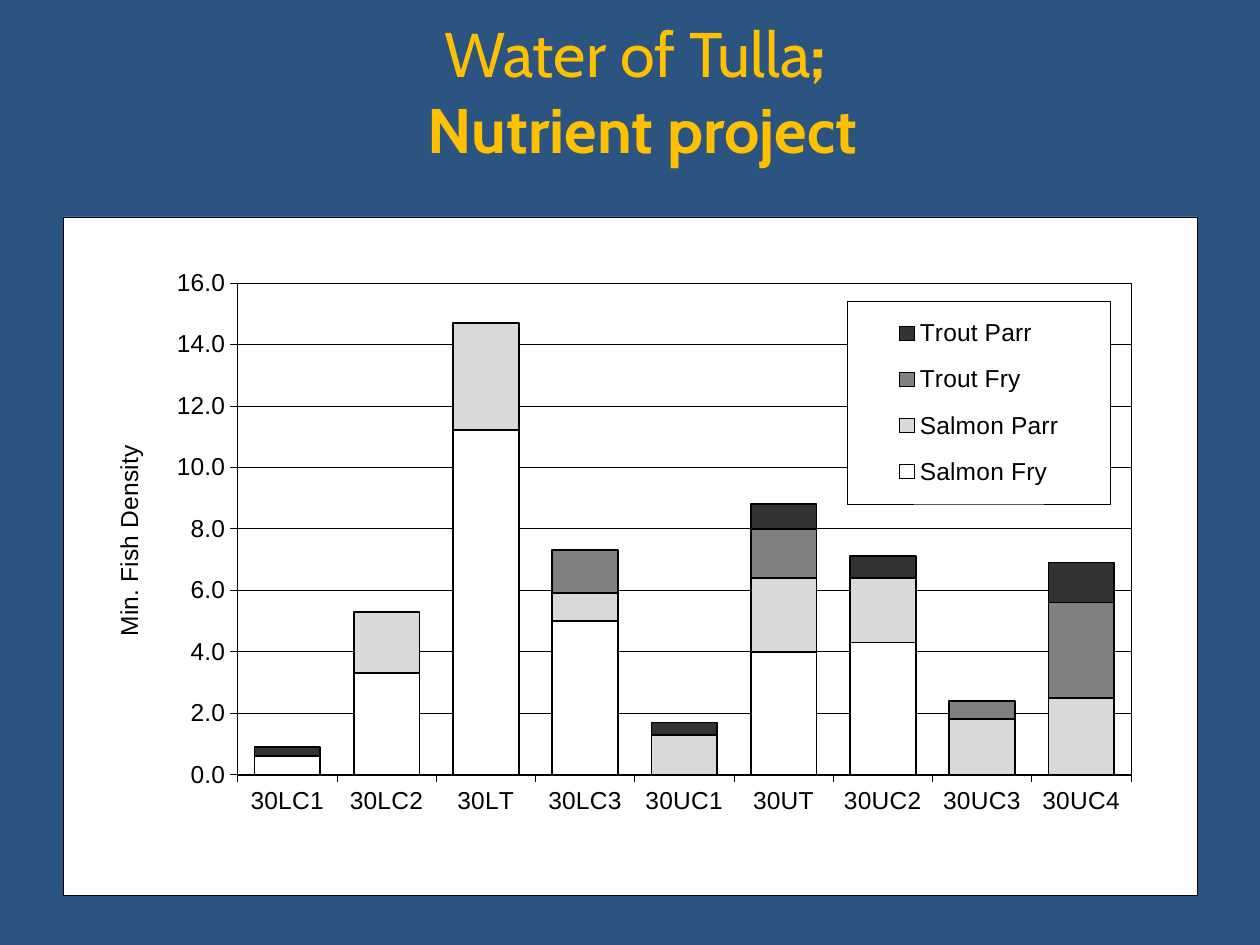
from dataclasses import dataclass

from pptx import Presentation
from pptx.chart.data import CategoryChartData
from pptx.dml.color import RGBColor
from pptx.enum.chart import XL_CHART_TYPE as ChartType
from pptx.enum.chart import XL_LEGEND_POSITION as LegendPosition
from pptx.enum.chart import XL_TICK_MARK as TickMark
from pptx.enum.text import MSO_ANCHOR, PP_ALIGN
from pptx.oxml import parse_xml
from pptx.oxml.ns import nsdecls, qn
from pptx.util import Inches, Pt

COLORS = {
    "background": "2B5481",
    "title": "FFC000",
    "paper": "FFFFFF",
    "ink": "000000",
    "salmon_parr": "D9D9D9",
    "trout_fry": "808080",
    "trout_parr": "333333",
}
SITES = ["30LC1", "30LC2", "30LT", "30LC3", "30UC1", "30UT", "30UC2", "30UC3", "30UC4"]


@dataclass
class FishGroup:
    name: str
    color: str
    densities: list[float]


GROUPS = [
    FishGroup("Salmon Fry", "paper", [0.6, 3.3, 11.2, 5, 0, 4, 4.3, 0, 0]),
    FishGroup("Salmon Parr", "salmon_parr", [0, 2, 3.5, 0.9, 1.3, 2.4, 2.1, 1.8, 2.5]),
    FishGroup("Trout Fry", "trout_fry", [0, 0, 0, 1.4, 0, 1.6, 0, 0.6, 3.1]),
    FishGroup("Trout Parr", "trout_parr", [0.3, 0, 0, 0, 0.4, 0.8, 0.7, 0, 1.3]),
]


def rgb(name: str) -> RGBColor:
    return RGBColor.from_string(COLORS[name])


def style_line(line, width: float) -> None:
    line.color.rgb = rgb("ink")
    line.width = Pt(width)


def style_font(font) -> None:
    font.name = "Arial"
    font.size = Pt(14)
    font.bold = False
    font.color.rgb = rgb("ink")


def panel_properties():
    """White fill with a hairline border, for parts without a format object."""
    return parse_xml(
        f'<c:spPr {nsdecls("c", "a")}>'
        f'<a:solidFill><a:srgbClr val="{COLORS["paper"]}"/></a:solidFill>'
        f'<a:ln w="{Pt(0.25)}"><a:solidFill><a:srgbClr val="{COLORS["ink"]}"/>'
        "</a:solidFill></a:ln></c:spPr>"
    )


def place(part, index: int, inner: bool = False, **fractions: float) -> None:
    """Set a manual layout, in fractions of the chart area."""
    for old in part.findall(qn("c:layout")):
        part.remove(old)
    target = '<c:layoutTarget val="inner"/>' if inner else ""
    modes = '<c:xMode val="edge"/><c:yMode val="edge"/>'
    values = "".join(f'<c:{key} val="{value}"/>' for key, value in fractions.items())
    part.insert(index, parse_xml(
        f'<c:layout {nsdecls("c")}><c:manualLayout>{target}{modes}{values}'
        "</c:manualLayout></c:layout>"
    ))


def add_title(page) -> None:
    title = page.shapes.title
    title.left, title.top = Inches(0.35), Inches(0.36)
    title.width, title.height = Inches(9.5), Inches(0.71)
    frame = title.text_frame
    frame.word_wrap = True
    frame.vertical_anchor = MSO_ANCHOR.MIDDLE
    para = frame.paragraphs[0]
    para.alignment = PP_ALIGN.CENTER
    for text, bold in (("Water of Tulla", False), ("; ", True), (None, True),
                       ("Nutrient project", True)):
        if text is None:
            para.add_line_break()
            continue
        span = para.add_run()
        span.text = text
        span.font.name = "Cabin"
        span.font.size = Pt(36)
        span.font.bold = bold
        span.font.color.rgb = rgb("title")


def add_density_chart(page) -> None:
    data = CategoryChartData(number_format="0.0")
    data.categories = SITES
    for group in GROUPS:
        data.add_series(group.name, group.densities)
    chart = page.shapes.add_chart(
        ChartType.COLUMN_STACKED, Inches(0.5), Inches(1.72), Inches(9), Inches(5.39), data
    ).chart
    chart.has_title = False
    style_font(chart.font)

    # Columns
    plot = chart.plots[0]
    plot.gap_width, plot.overlap = 51, 100
    plot.vary_by_categories = False
    for series, group in zip(plot.series, GROUPS):
        series.format.fill.solid()
        series.format.fill.fore_color.rgb = rgb(group.color)
        style_line(series.format.line, 1)

    # Axes
    for axis in (chart.category_axis, chart.value_axis):
        axis.major_tick_mark = TickMark.OUTSIDE
        axis.minor_tick_mark = TickMark.NONE
        style_line(axis.format.line, 0.25)
    density = chart.value_axis
    density.minimum_scale, density.maximum_scale, density.major_unit = 0, 16, 2
    density.tick_labels.number_format = "0.0"
    density.tick_labels.number_format_is_linked = False
    density.has_major_gridlines = True
    style_line(density.major_gridlines.format.line, 0.25)
    span = density.axis_title.text_frame.paragraphs[0].add_run()
    span.text = "Min. Fish Density"
    style_font(span.font)
    place(density.axis_title.element, 1, x=0.04, y=0.33)

    # Legend
    chart_part = chart.element.find(qn("c:chart"))
    chart.has_legend = True
    chart.legend.position = LegendPosition.RIGHT
    chart.legend.include_in_layout = False
    style_font(chart.legend.font)
    legend_part = chart_part.find(qn("c:legend"))
    place(legend_part, 1, x=0.692, y=0.124, w=0.232, h=0.299)
    legend_part.find(qn("c:overlay")).addnext(panel_properties())

    # Chart and plot panels
    chart_part.addnext(panel_properties())
    plot_area = chart_part.find(qn("c:plotArea"))
    place(plot_area, 0, inner=True, x=0.154, y=0.097, w=0.788, h=0.725)
    plot_area.append(panel_properties())


def main() -> None:
    deck = Presentation()
    deck.slide_width, deck.slide_height = Inches(10), Inches(7.5)
    page = deck.slides.add_slide(deck.slide_layouts[5])
    page.background.fill.solid()
    page.background.fill.fore_color.rgb = rgb("background")
    add_title(page)
    add_density_chart(page)
    deck.save("out.pptx")


if __name__ == "__main__":
    main()
